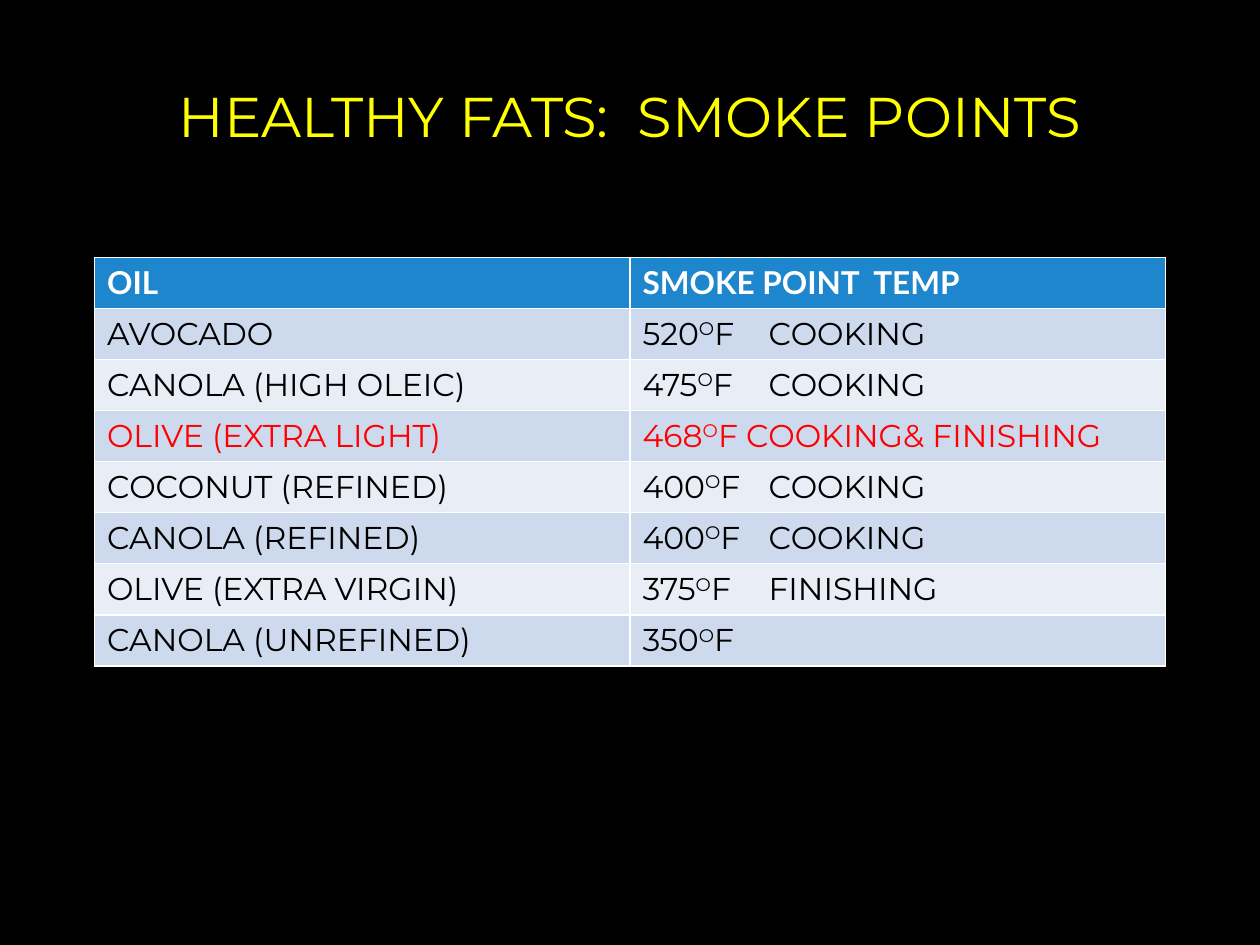
from lxml.etree import SubElement
from pptx import Presentation
from pptx.dml.color import RGBColor
from pptx.enum.text import MSO_ANCHOR, PP_ALIGN
from pptx.oxml.ns import qn
from pptx.util import Pt

TITLE = "HEALTHY FATS:  SMOKE POINTS"
HEADINGS = ("OIL", "SMOKE POINT  TEMP")
# oil, smoke point, text between the temperature unit and the use, use, text colour
OILS = [
    ("AVOCADO", "520", "\t", "COOKING", "000000"),
    ("CANOLA (HIGH OLEIC)", "475", "\t", "COOKING", "000000"),
    ("OLIVE (EXTRA LIGHT)", "468", " ", "COOKING& FINISHING", "FF0000"),
    ("COCONUT (REFINED)", "400", "\t", "COOKING", "000000"),
    ("CANOLA (REFINED)", "400", "\t", "COOKING", "000000"),
    ("OLIVE (EXTRA VIRGIN)", "375", "\t", "FINISHING", "000000"),
    ("CANOLA (UNREFINED)", "350", "", "", "000000"),
]
HEADER_FILL = "1D86CD"
BAND_FILLS = ("CDD9ED", "E8EDF6")
LEFT, WIDTH = 54, 612
TABLE_TOP, ROW_HEIGHT = 147, 29.16
USE_TAB = 72


def color(hex_string):
    return RGBColor.from_string(hex_string)


def set_font(paragraph, name, size, hex_string, bold=False):
    font = paragraph.font
    font.name, font.size, font.bold = name, Pt(size), bold
    font.color.rgb = color(hex_string)


def fill_cell(cell, hex_string):
    cell.fill.solid()
    cell.fill.fore_color.rgb = color(hex_string)
    return cell.text_frame.paragraphs[0]


def add_tab_stop(paragraph, position):
    tabs = SubElement(paragraph._p.get_or_add_pPr(), qn("a:tabLst"))
    SubElement(tabs, qn("a:tab"), pos=str(Pt(position)), algn="l")


def add_temperature(paragraph, degrees, gap, use):
    """Write the smoke point with a raised O as its degree sign, then the use."""
    for text in (degrees, "O", "F" + gap + use):
        run = paragraph.add_run()
        run.text = text
        if text == "O":
            run._r.get_or_add_rPr().set("baseline", "30000")


presentation = Presentation()
presentation.slide_width, presentation.slide_height = Pt(720), Pt(540)
slide = presentation.slides.add_slide(presentation.slide_layouts[5])
slide.background.fill.solid()
slide.background.fill.fore_color.rgb = color("000000")

title = slide.shapes.title
title.left, title.top, title.width, title.height = Pt(LEFT), Pt(9.4), Pt(WIDTH), Pt(112.3)
title.text_frame.text = TITLE
title.text_frame.vertical_anchor = MSO_ANCHOR.MIDDLE
title_paragraph = title.text_frame.paragraphs[0]
title_paragraph.alignment = PP_ALIGN.CENTER
set_font(title_paragraph, "Montserrat", 32, "FFFF00")

row_count = len(OILS) + 1
table = slide.shapes.add_table(
    row_count, len(HEADINGS), Pt(LEFT), Pt(TABLE_TOP), Pt(WIDTH), Pt(ROW_HEIGHT * row_count)
).table

for column, heading in enumerate(HEADINGS):
    paragraph = fill_cell(table.cell(0, column), HEADER_FILL)
    paragraph.text = heading
    set_font(paragraph, "Lato", 18, "FFFFFF", bold=True)

for row, (oil, degrees, gap, use, text_color) in enumerate(OILS, start=1):
    band = BAND_FILLS[(row - 1) % 2]
    oil_paragraph = fill_cell(table.cell(row, 0), band)
    oil_paragraph.text = oil
    temperature_paragraph = fill_cell(table.cell(row, 1), band)
    add_temperature(temperature_paragraph, degrees, gap, use)
    if gap == "\t":
        add_tab_stop(temperature_paragraph, USE_TAB)
    for paragraph in (oil_paragraph, temperature_paragraph):
        set_font(paragraph, "Montserrat", 18, text_color)

presentation.save("out.pptx")
